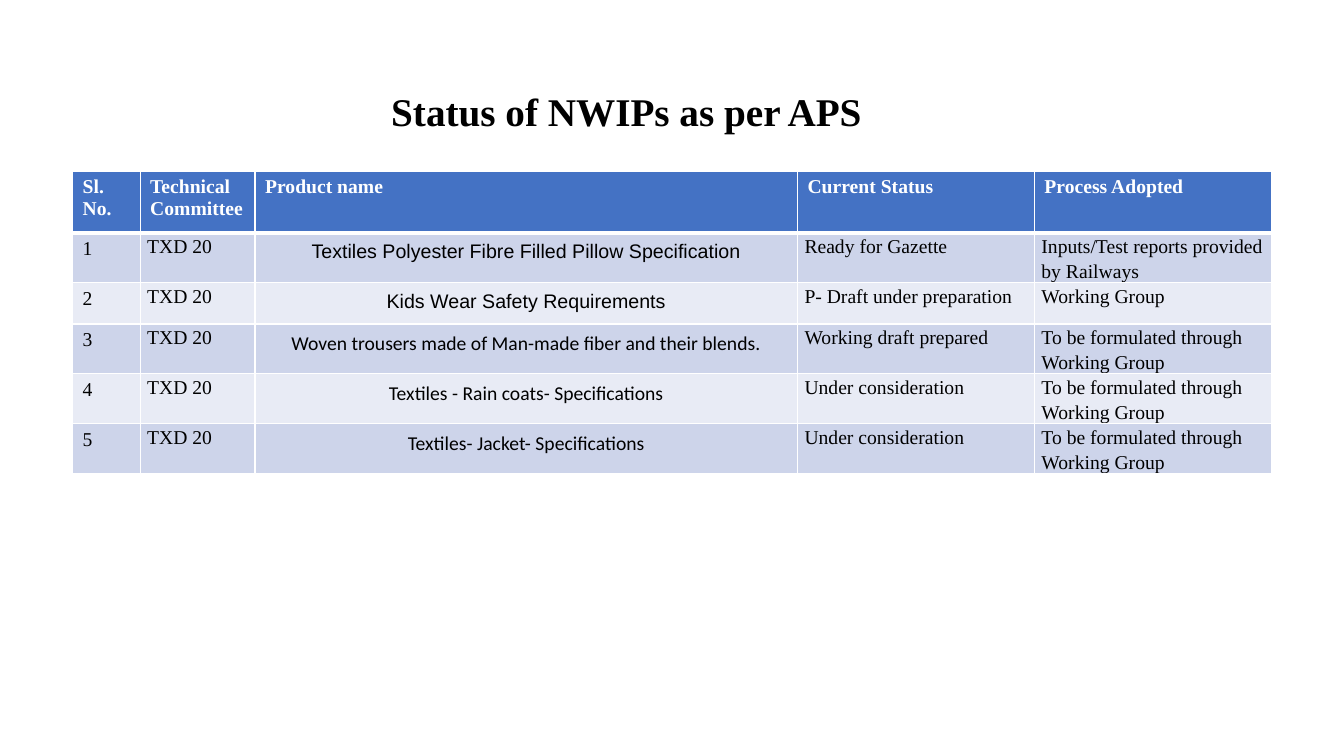
from pptx import Presentation
from pptx.dml.color import RGBColor
from pptx.enum import text
from pptx.oxml.ns import qn
from pptx.util import Inches, Pt
from lxml import etree

SERIF = "Times New Roman"
HEADER_FILL, BANDS = "4472C4", ("CDD4EA", "E8EBF5")
BLACK, WHITE = "000000", "FFFFFF"
COLUMN_WIDTHS = (0.67, 1.14, 5.38, 2.35, 2.35)
HEADERS = ("Sl. No.", "Technical Committee", "Product name",
           "Current Status", "Process Adopted")
TO_FORMULATE = "To be formulated through Working Group"
# Product, product font, status, process
PRODUCTS = (
    ("Textiles Polyester Fibre Filled Pillow Specification", "Arial",
     "Ready for Gazette", "Inputs/Test reports provided by Railways"),
    ("Kids Wear Safety Requirements", "Arial",
     "P- Draft under preparation", "Working Group"),
    ("Woven trousers made of Man-made fiber and their blends.", "Calibri",
     "Working draft prepared", TO_FORMULATE),
    ("Textiles - Rain coats- Specifications", "Calibri",
     "Under consideration", TO_FORMULATE),
    ("Textiles- Jacket- Specifications", "Calibri",
     "Under consideration", TO_FORMULATE),
)


def color(hex_code):
    return RGBColor.from_string(hex_code)


def add_run(p, words, size, font, hex_code, bold=False):
    r = p.add_run()
    r.text = words
    r.font.size, r.font.name, r.font.bold = Pt(size), font, bold
    r.font.color.rgb = color(hex_code)


def set_margins(box, across, down):
    box.margin_left = box.margin_right = Inches(across)
    box.margin_top = box.margin_bottom = Inches(down)


def set_borders(cell, top=1, bottom=1):
    tc_pr = cell._tc.get_or_add_tcPr()
    for side, width in (("L", 1), ("R", 1), ("T", top), ("B", bottom)):
        ln = etree.SubElement(tc_pr, qn("a:ln" + side), w=str(Pt(width)))
        fill = etree.SubElement(ln, qn("a:solidFill"))
        etree.SubElement(fill, qn("a:srgbClr"), val=WHITE)


def fill_cell(cell, words, fill, margins=(0.1, 0.05), font=SERIF,
              hex_code=BLACK, bold=False, spacing=None, align=None):
    cell.fill.solid()
    cell.fill.fore_color.rgb = color(fill)
    set_margins(cell, *margins)
    p = cell.text_frame.paragraphs[0]
    p.line_spacing, p.alignment = spacing, align
    add_run(p, words, 14, font, hex_code, bold)


def add_title(slide, words):
    sp = slide.shapes.title
    sp.left, sp.top = Inches(3.78), Inches(0.68)
    sp.width, sp.height = Inches(12.05), Inches(0.89)
    tf = sp.text_frame
    tf.auto_size = text.MSO_AUTO_SIZE.NONE
    tf.vertical_anchor = text.MSO_ANCHOR.MIDDLE
    set_margins(tf, 0.1, 0.05)
    p = tf.paragraphs[0]
    p.alignment, p.line_spacing = text.PP_ALIGN.LEFT, 0.9
    add_run(p, words, 28, SERIF, BLACK, True)


def add_status_table(slide):
    frame = slide.shapes.add_table(
        len(PRODUCTS) + 1, len(HEADERS), Inches(0.72), Inches(1.7),
        Inches(11.89), Inches(3.46))
    table = frame.table
    for column, width in zip(table.columns, COLUMN_WIDTHS):
        column.width = Inches(width)
    for i, row in enumerate(table.rows):
        row.height = Inches(0.41 if i else 0.61)
    frame.height = Inches(3.46)

    # Header row
    for cell, words in zip(table.rows[0].cells, HEADERS):
        set_borders(cell, bottom=3)
        fill_cell(cell, words, HEADER_FILL, hex_code=WHITE, bold=True)

    # Banded product rows
    plain = dict(margins=(0.07, 0), spacing=1.15)
    for i, (product, font, status, process) in enumerate(PRODUCTS, 1):
        fill = BANDS[(i - 1) % 2]
        number, committee, name, state, method = cells = list(table.rows[i].cells)
        for cell in cells:
            set_borders(cell, top=3 if i == 1 else 1)
        fill_cell(number, str(i), fill)
        fill_cell(committee, "TXD 20", fill, **plain)
        fill_cell(name, product, fill, margins=(0.1, 0.08), font=font,
                  align=text.PP_ALIGN.CENTER)
        fill_cell(state, status, fill, **plain)
        fill_cell(method, process, fill, **plain)


def main():
    prs = Presentation()
    prs.slide_width, prs.slide_height = Inches(13.33), Inches(7.5)
    slide = prs.slides.add_slide(prs.slide_layouts[5])
    add_status_table(slide)
    add_title(slide, "Status of NWIPs as per APS")
    prs.save("out.pptx")


if __name__ == "__main__":
    main()
